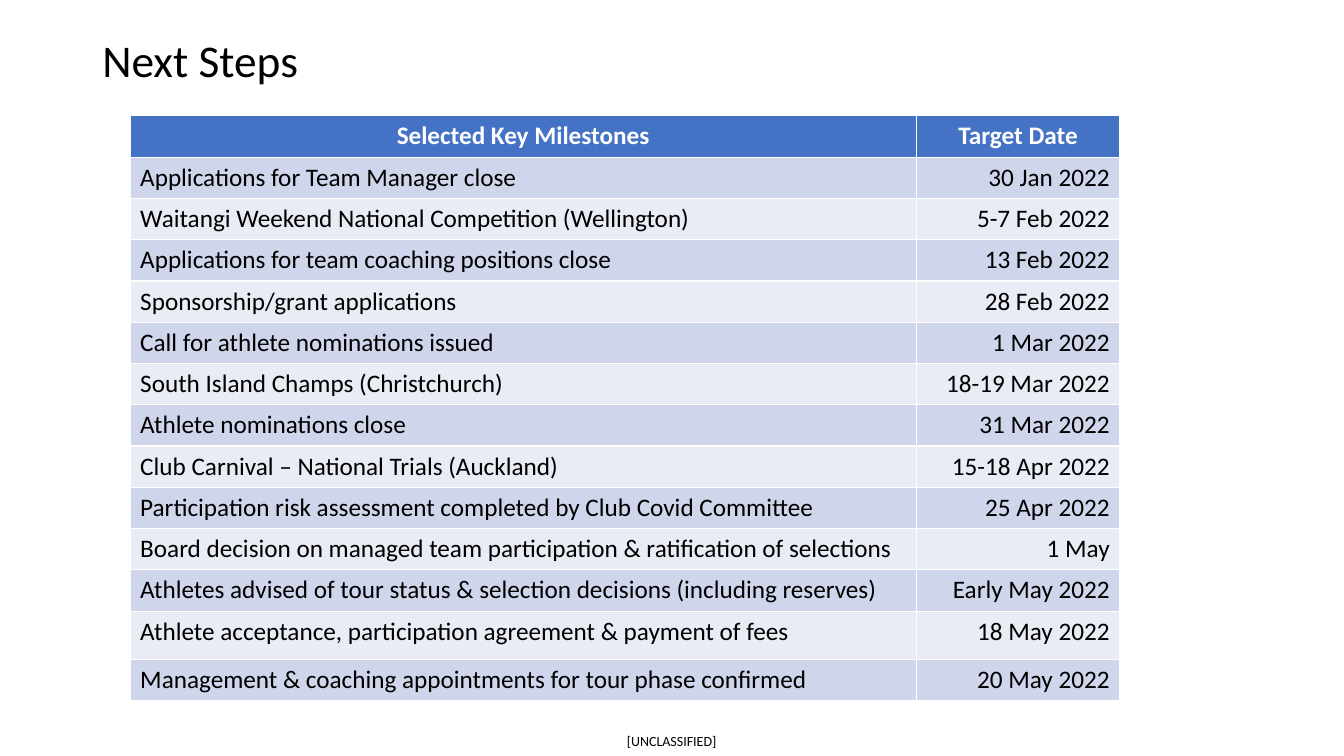
"""Build the Next Steps slide with its table of milestones."""
import pptx
import pptx.dml.color
import pptx.enum.text
import pptx.util

Cm = pptx.util.Cm
ALIGN = pptx.enum.text.PP_ALIGN
MIDDLE = pptx.enum.text.MSO_ANCHOR.MIDDLE

COLOURS = {
    "text": "000000",
    "header_text": "FFFFFF",
    "header": "4472C4",
    "odd_row": "CFD5EA",
    "even_row": "E9EBF5",
}
HEADINGS = ("Selected Key Milestones", "Target Date")
MILESTONES = [
    ("Applications for Team Manager close", "30 Jan 2022"),
    ("Waitangi Weekend National Competition (Wellington)", "5-7 Feb 2022"),
    ("Applications for team coaching positions close", "13 Feb 2022"),
    ("Sponsorship/grant applications", "28 Feb 2022"),
    ("Call for athlete nominations issued", "1 Mar 2022"),
    ("South Island Champs (Christchurch)", "18-19 Mar 2022"),
    ("Athlete nominations close", "31 Mar 2022"),
    ("Club Carnival – National Trials (Auckland)", "15-18 Apr 2022"),
    ("Participation risk assessment completed by Club Covid Committee", "25 Apr 2022"),
    ("Board decision on managed team participation & ratification of selections", "1 May"),
    ("Athletes advised of tour status & selection decisions (including reserves)", "Early May 2022"),
    ("Athlete acceptance, participation agreement & payment of fees", "18 May 2022"),
    ("Management & coaching appointments for tour phase confirmed", "20 May 2022"),
]
COLUMN_WIDTHS = (19.81, 5.13)
ROW_HEIGHT = 1.04
TALL_ROW, TALL_HEIGHT = 12, 1.22


def rgb(name):
    return pptx.dml.color.RGBColor.from_string(COLOURS[name])


def format_paragraph(paragraph, size, alignment, colour="text", bold=False):
    paragraph.alignment = alignment
    paragraph.font.name = "Calibri"
    paragraph.font.size = pptx.util.Pt(size)
    paragraph.font.bold = bold
    paragraph.font.color.rgb = rgb(colour)


def add_text(slide, text, left, top, width, height, size, alignment, inset=0.0):
    box = slide.shapes.add_textbox(Cm(left), Cm(top), Cm(width), Cm(height))
    frame = box.text_frame
    frame.word_wrap = True
    frame.vertical_anchor = MIDDLE
    frame.margin_left = frame.margin_right = Cm(inset)
    frame.margin_top = frame.margin_bottom = Cm(inset / 2)
    frame.text = text
    paragraph = frame.paragraphs[0]
    format_paragraph(paragraph, size, alignment)
    return paragraph


def fill_row(table, row, texts, alignments, fill, colour="text", bold=False):
    for column, (text, alignment) in enumerate(zip(texts, alignments)):
        cell = table.cell(row, column)
        cell.text = text
        cell.fill.solid()
        cell.fill.fore_color.rgb = rgb(fill)
        format_paragraph(cell.text_frame.paragraphs[0], 18, alignment, colour, bold)


def add_milestone_table(slide, left, top):
    row_count = len(MILESTONES) + 1
    height = ROW_HEIGHT * (row_count - 1) + TALL_HEIGHT
    table = slide.shapes.add_table(
        row_count, len(HEADINGS), Cm(left), Cm(top), Cm(sum(COLUMN_WIDTHS)), Cm(height)
    ).table
    for column, width in zip(table.columns, COLUMN_WIDTHS):
        column.width = Cm(width)
    for index, row in enumerate(table.rows):
        row.height = Cm(TALL_HEIGHT if index == TALL_ROW else ROW_HEIGHT)
    fill_row(table, 0, HEADINGS, (ALIGN.CENTER, ALIGN.CENTER), "header", "header_text", True)
    for index, milestone in enumerate(MILESTONES, start=1):
        fill = "odd_row" if index % 2 else "even_row"
        fill_row(table, index, milestone, (ALIGN.LEFT, ALIGN.RIGHT), fill)


def main():
    presentation = pptx.Presentation()
    presentation.slide_width = Cm(33.87)
    presentation.slide_height = Cm(19.05)
    slide = presentation.slides.add_slide(presentation.slide_layouts[6])
    add_text(slide, "[UNCLASSIFIED]", 15.4, 18.31, 3.05, 0.74, 10, ALIGN.CENTER)
    title = add_text(slide, "Next Steps", 2.33, 0.97, 29.21, 1.22, 32.4, ALIGN.LEFT, 0.25)
    title.line_spacing = 0.9
    add_milestone_table(slide, 3.28, 2.92)
    presentation.save("out.pptx")


if __name__ == "__main__":
    main()
